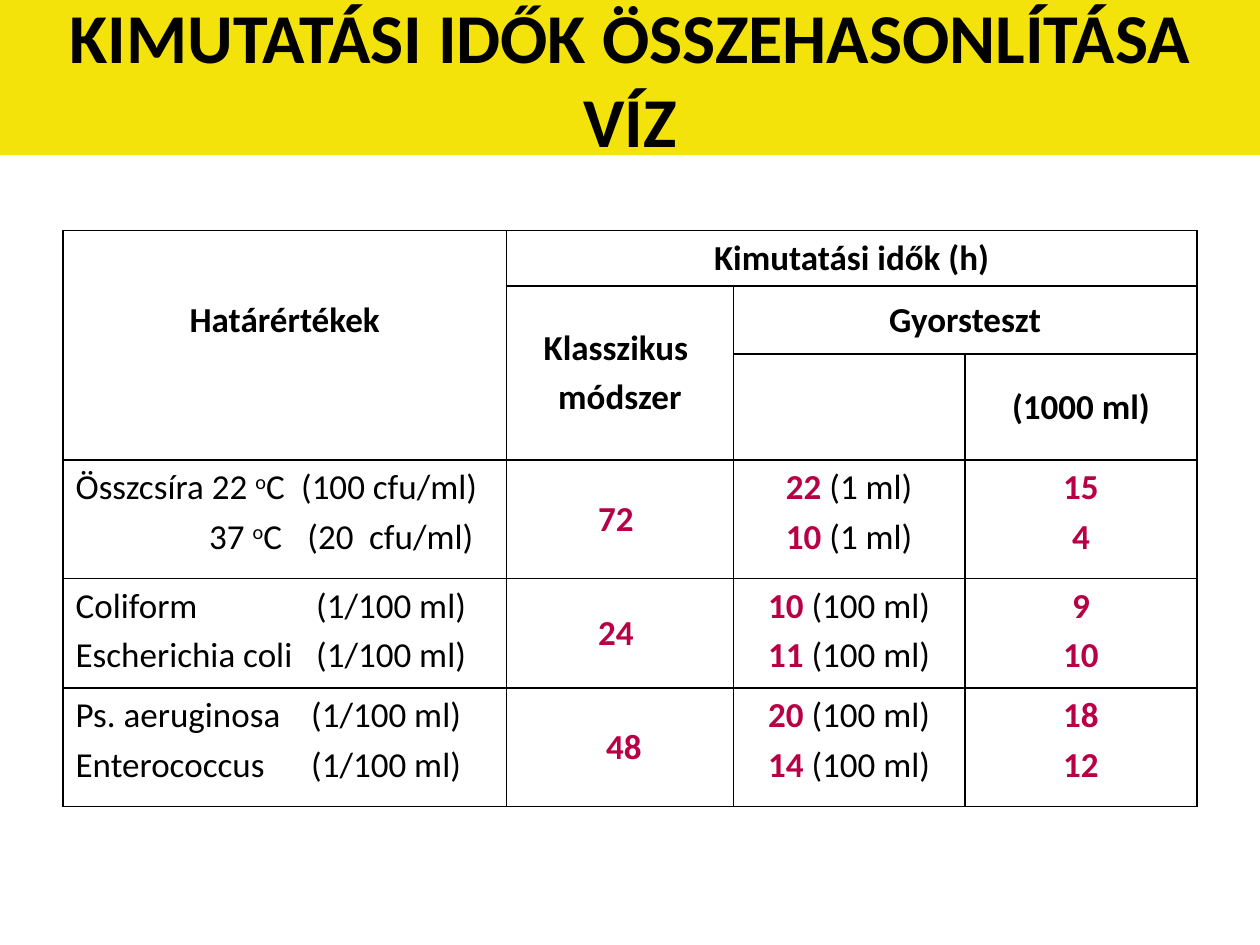
from lxml import etree
from pptx import Presentation
from pptx.dml.color import RGBColor
from pptx.enum.shapes import MSO_SHAPE
from pptx.enum.text import MSO_ANCHOR, PP_ALIGN
from pptx.oxml.ns import qn
from pptx.util import Inches, Pt

RECT = MSO_SHAPE.RECTANGLE
MIDDLE, TOP = MSO_ANCHOR.MIDDLE, MSO_ANCHOR.TOP
CENTER, LEFT = PP_ALIGN.CENTER, PP_ALIGN.LEFT

THEME = {
    "font": "Calibri",
    "title_size": Pt(40),
    "table_size": Pt(20),
    "line_gap": Pt(4),
    "border": Pt(1),
    "text": RGBColor.from_string("000000"),
    "hours": RGBColor.from_string("B80047"),
    "banner": RGBColor.from_string("F4E30A"),
}

SLIDE_W, SLIDE_H = 10, 7.5
BANNER_H = 1.23
TABLE_LEFT, TABLE_TOP = 0.5, 1.83
COL_WIDTHS = [3.52, 1.8, 1.84, 1.84]
ROW_HEIGHTS = [0.44, 0.54, 0.84, 0.94, 0.87, 0.94]
LABEL_LIFT = 0.45  # bottom margin that raises the first header label

TITLE = "KIMUTATÁSI IDŐK ÖSSZEHASONLÍTÁSA\vVÍZ"

# (row, column, last row, last column, lines)
HEADERS = [
    (0, 0, 2, 0, ["Határértékek"]),
    (0, 1, 0, 3, ["Kimutatási idők (h)"]),
    (1, 1, 2, 1, ["Klasszikus ", "módszer"]),
    (1, 2, 1, 3, ["Gyorsteszt"]),
    (2, 3, 2, 3, ["(1000 ml)"]),
]

# limits: (runs, tab stops); microtest: (hours, sample); large: hours
RESULTS = [
    {
        "limits": [
            (["Összcsíra 22 ", ("o", "super"), "C\t(100 cfu/ml)"], [1.79]),
            (["\t37 ", ("o", "super"), "C\t(20\tcfu/ml)"], [1.06, 1.84, 2.33]),
        ],
        "classic": "72 ",
        "small": [("22", " (1 ml)"), ("10", " (1 ml)")],
        "large": ["15", "4"],
    },
    {
        "limits": [
            (["Coliform\t(1/100 ml)"], [1.91]),
            (["Escherichia coli\t(1/100 ml)"], [1.91]),
        ],
        "classic": "24 ",
        "small": [("10", " (100 ml)"), ("11", " (100 ml)")],
        "large": ["9", "10"],
    },
    {
        "limits": [
            (["Ps. aeruginosa\t(1/100 ml)"], [1.87]),
            (["Enterococcus\t(1/100 ml)"], [1.87]),
        ],
        "classic": " 48",
        "small": [("20", " (100 ml)"), ("14", " (100 ml)")],
        "large": ["18", "12"],
    },
]


def set_font(font, size, color, bold):
    font.name, font.size, font.bold = THEME["font"], size, bold
    font.color.rgb = color


def add_tabs(paragraph, stops):
    tabs = etree.SubElement(paragraph._p.get_or_add_pPr(), qn("a:tabLst"))
    for stop in stops:
        etree.SubElement(tabs, qn("a:tab"), pos=str(Inches(stop)), algn="l")


def write_lines(cell, lines, color, bold, align=CENTER, anchor=MIDDLE):
    """Write (runs, tab stops) lines; a run is text or (text, style)."""
    cell.vertical_anchor = anchor
    frame = cell.text_frame
    for i, (runs, stops) in enumerate(lines):
        paragraph = frame.add_paragraph() if i else frame.paragraphs[0]
        paragraph.alignment = align
        if i:
            paragraph.space_before = THEME["line_gap"]
        if stops:
            add_tabs(paragraph, stops)
        set_font(paragraph.font, THEME["table_size"], color, bold)
        for part in runs:
            text, style = (part, None) if isinstance(part, str) else part
            run = paragraph.add_run()
            run.text = text
            if style == "super":
                run.font._element.set("baseline", "30000")
            elif style == "hours":
                run.font.bold = True
                run.font.color.rgb = THEME["hours"]


def plain(lines):
    return [([line], []) for line in lines]


def add_borders(cell):
    props = cell._tc.get_or_add_tcPr()
    for i, side in enumerate(("lnL", "lnR", "lnT", "lnB")):
        line = etree.Element(qn(f"a:{side}"), w=str(THEME["border"]))
        fill = etree.SubElement(line, qn("a:solidFill"))
        etree.SubElement(fill, qn("a:srgbClr"), val=str(THEME["text"]))
        props.insert(i, line)


def add_banner(slide):
    banner = slide.shapes.add_shape(RECT, 0, 0, Inches(SLIDE_W), Inches(BANNER_H))
    banner.shadow.inherit = False
    banner.fill.solid()
    banner.fill.fore_color.rgb = THEME["banner"]
    banner.line.fill.background()
    frame = banner.text_frame
    frame.word_wrap = True
    frame.vertical_anchor = MIDDLE
    title = frame.paragraphs[0]
    title.text = TITLE
    title.alignment = CENTER
    set_font(title.font, THEME["title_size"], THEME["text"], True)


def add_times_table(slide):
    table = slide.shapes.add_table(
        len(ROW_HEIGHTS), len(COL_WIDTHS), Inches(TABLE_LEFT), Inches(TABLE_TOP),
        Inches(sum(COL_WIDTHS)), Inches(sum(ROW_HEIGHTS))).table
    table.first_row = table.horz_banding = False
    for column, width in zip(table.columns, COL_WIDTHS):
        column.width = Inches(width)
    for row, height in zip(table.rows, ROW_HEIGHTS):
        row.height = Inches(height)
    for cell in table.iter_cells():
        cell.fill.background()
        add_borders(cell)

    for row, col, last_row, last_col, lines in HEADERS:
        cell = table.cell(row, col)
        if (row, col) != (last_row, last_col):
            cell.merge(table.cell(last_row, last_col))
        write_lines(cell, plain(lines), THEME["text"], True)
    table.cell(0, 0).margin_bottom = Inches(LABEL_LIFT)

    first_result = len(ROW_HEIGHTS) - len(RESULTS)
    for row, result in enumerate(RESULTS, first_result):
        limits, classic, small, large = (table.cell(row, c) for c in range(4))
        samples = [([(hours, "hours"), sample], []) for hours, sample in result["small"]]
        write_lines(limits, result["limits"], THEME["text"], False, LEFT, TOP)
        write_lines(classic, plain([result["classic"]]), THEME["hours"], True)
        write_lines(small, samples, THEME["text"], False, anchor=TOP)
        write_lines(large, plain(result["large"]), THEME["hours"], True, anchor=TOP)


def main():
    deck = Presentation()
    deck.slide_width, deck.slide_height = Inches(SLIDE_W), Inches(SLIDE_H)
    slide = deck.slides.add_slide(deck.slide_layouts[6])
    add_banner(slide)
    add_times_table(slide)
    deck.save("out.pptx")


if __name__ == "__main__":
    main()
